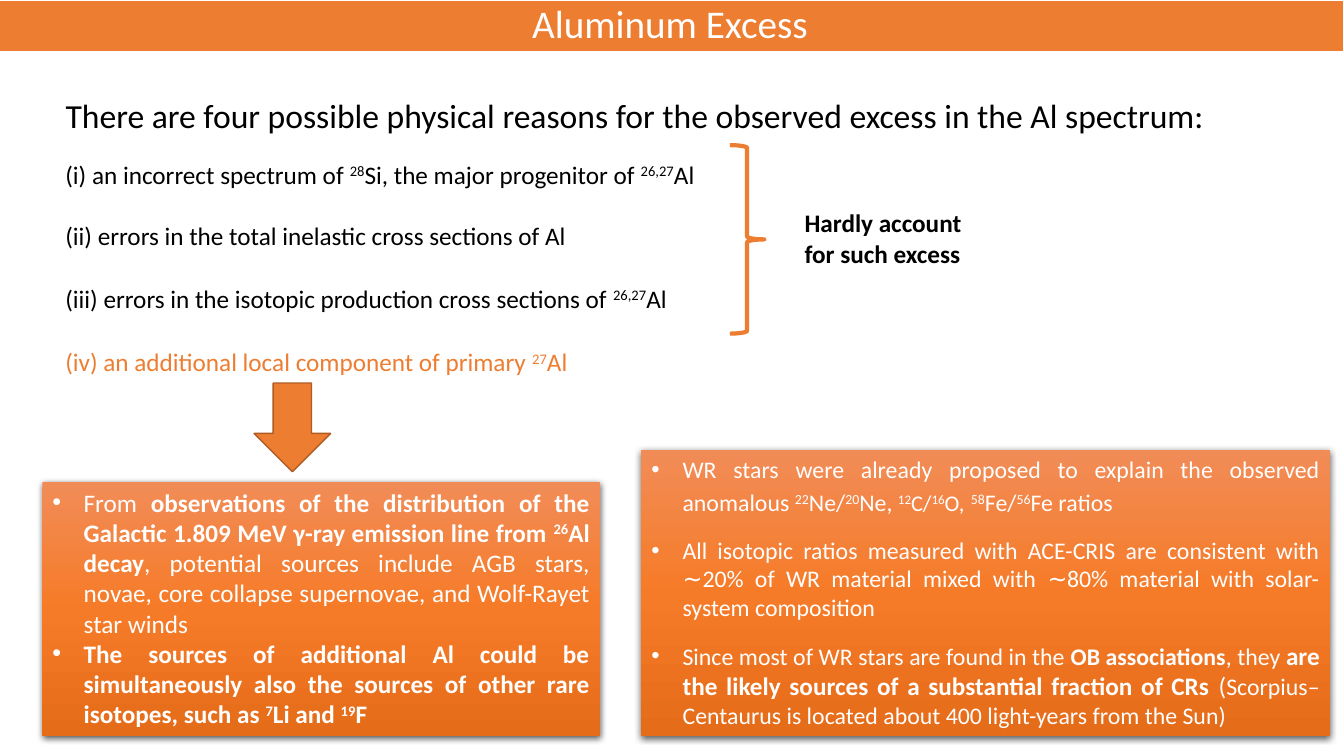
from lxml import etree
from pptx import Presentation
from pptx.dml.color import RGBColor
from pptx.enum.shapes import MSO_SHAPE as SHAPE
from pptx.enum.text import MSO_ANCHOR as ANCHOR, MSO_AUTO_SIZE as AUTO, PP_ALIGN as ALIGN
from pptx.oxml import parse_xml
from pptx.util import Inches, Pt

NS = 'xmlns:a="http://schemas.openxmlformats.org/drawingml/2006/main"'
ORANGE, WHITE, BLACK = "ED7D31", "FFFFFF", "000000"


def rgb(value):
    return RGBColor.from_string(value)


class SlideBuilder:
    font = "Calibri"
    stops = ((0, "F18C57"), (50, "F67B28"), (100, "E56C19"))

    def __init__(self, slide):
        self.s = slide

    def placeholder(self, idx, box):
        sp = self.s.placeholders[idx]
        sp.left, sp.top, sp.width, sp.height = (Inches(v) for v in box)
        return sp

    def fill_text(self, sp, paragraphs, size, color, anchor=ANCHOR.TOP, align=ALIGN.LEFT,
                  spacing=1.0, gap=0, bullet=False):
        tf = sp.text_frame
        tf.word_wrap = True
        tf.auto_size = AUTO.NONE
        tf.vertical_anchor = anchor
        for i, runs in enumerate(paragraphs):
            p = tf.add_paragraph() if i else tf.paragraphs[0]
            p.alignment = align
            p.line_spacing = spacing
            p.space_before = Pt(gap if i else 0)
            if bullet:
                self.bullet(p)
            for run in runs:
                self.add_run(p, size, color, *run)

    def add_run(self, p, size, color, text, style="", own_size=None):
        r = p.add_run()
        r.text = text
        r.font.name = self.font
        r.font.size = Pt(own_size or size)
        r.font.bold = "b" in style
        r.font.color.rgb = rgb(color)
        if "^" in style:
            r.font._element.set("baseline", "30000")

    def bullet(self, p):
        pPr = p._p.get_or_add_pPr()
        pPr.set("marL", str(Inches(0.31)))
        pPr.set("indent", str(Inches(-0.31)))
        pPr.append(parse_xml(f'<a:buFont {NS} typeface="Arial"/>'))
        pPr.append(parse_xml(f'<a:buChar {NS} char="•"/>'))

    def title(self, box, text):
        sp = self.placeholder(0, box)
        sp.fill.solid()
        sp.fill.fore_color.rgb = rgb(ORANGE)
        sp.line.color.rgb = rgb(WHITE)
        sp.line.width = Pt(1.5)
        self.fill_text(sp, [[(text,)]], 28, WHITE, ANCHOR.MIDDLE, ALIGN.CENTER, 0.9)

    def body(self, idx, box, paragraphs, size, spacing=1.0):
        self.fill_text(self.placeholder(idx, box), paragraphs, size, BLACK, spacing=spacing)

    def panel(self, idx, box, paragraphs, size, gap=0):
        sp = self.placeholder(idx, box)
        spPr = sp._element.spPr
        stops = "".join(f'<a:gs pos="{pos * 1000}"><a:srgbClr val="{color}"/></a:gs>'
                        for pos, color in self.stops)
        spPr.append(parse_xml(f'<a:gradFill {NS} rotWithShape="1"><a:gsLst>{stops}</a:gsLst>'
                              '<a:lin ang="5400000" scaled="0"/></a:gradFill>'))
        effects = etree.SubElement(spPr, spPr[-1].tag.replace("gradFill", "effectLst"))
        effects.append(parse_xml(
            f'<a:outerShdw {NS} blurRad="{Pt(4.5)}" dist="{Pt(1.5)}" dir="5400000" '
            'algn="ctr" rotWithShape="0"><a:srgbClr val="000000">'
            '<a:alpha val="63000"/></a:srgbClr></a:outerShdw>'))
        self.fill_text(sp, paragraphs, size, WHITE, align=ALIGN.JUSTIFY, gap=gap, bullet=True)

    def text(self, box, paragraphs, size, color):
        sp = self.s.shapes.add_textbox(*(Inches(v) for v in box))
        self.fill_text(sp, paragraphs, size, color)

    def shape(self, kind, box, line, width, fill=None):
        sp = self.s.shapes.add_shape(kind, *(Inches(v) for v in box))
        sp.shadow.inherit = False
        if fill:
            sp.fill.solid()
            sp.fill.fore_color.rgb = rgb(fill)
        else:
            sp.fill.background()
        sp.line.color.rgb = rgb(line)
        sp.line.width = Pt(width)


REASONS = [
    (1.53, 7.64, BLACK, [("(i) an incorrect spectrum of ",), ("28", "^"),
                         ("Si, the major progenitor of ",), ("26,27", "^"), ("Al",)]),
    (2.14, 6.67, BLACK, [("(ii) errors in the total inelastic cross sections of Al",)]),
    (2.76, 7.74, BLACK, [("(iii) errors in the isotopic production cross sections of ",),
                         ("26,27", "^"), ("Al",)]),
    (3.39, 6.67, ORANGE, [("(iv) an additional local component of primary ",),
                          ("27", "^"), ("Al",)]),
]
SOURCES = [
    [("From ",),
     ("observations of the distribution of the Galactic 1.809 MeV γ-ray emission line from ", "b"),
     ("26", "b^"), ("Al decay", "b"),
     (", potential sources include AGB stars, novae, core collapse supernovae, "
      "and Wolf-Rayet star winds",)],
    [("The sources of additional Al could be simultaneously also the sources of other "
      "rare isotopes, such as ", "b"),
     ("7", "b^"), ("Li and ", "b"), ("19", "b^"), ("F", "b")],
]
WR_STARS = [
    [("WR stars were already proposed to explain the observed anomalous ",),
     ("22", "^"), ("Ne/",), ("20", "^"), ("Ne, ",),
     ("12", "^", 16), ("C/", "", 16), ("16", "^", 16), ("O,", "", 16), (" ", "", 20),
     ("58", "^"), ("Fe/",), ("56", "^"), ("Fe ratios",)],
    [("All isotopic ratios measured with ACE-CRIS are consistent with ∼20% of WR material "
      "mixed with ∼80% material with solar-system composition",)],
    [("Since most of WR stars are found in the ",), ("OB associations", "b"), (", they ",),
     ("are the likely sources of a substantial fraction of CRs ", "b", 18), ("(", "", 18),
     ("Scorpius–Centaurus is located about 400 light-years from the Sun)",)],
]


def main():
    prs = Presentation()
    prs.slide_width, prs.slide_height = Inches(13.33), Inches(7.5)
    comparison = prs.slide_layouts[4]
    s = SlideBuilder(prs.slides.add_slide(comparison))

    s.title((-0.04, 0, 13.37, 0.52), "Aluminum Excess")
    s.body(1, (0.55, 0.94, 11.81, 0.59),
           [[("There are four possible physical reasons for the observed excess "
              "in the Al spectrum:",)]], 24, 0.9)
    s.panel(2, (0.42, 4.78, 5.53, 2.52), SOURCES, 18)
    s.panel(4, (6.36, 4.46, 6.83, 2.84), WR_STARS, 17, gap=13.4)

    for top, width, color, runs in REASONS:
        s.text((0.55, top, width, 0.4), [runs], 18, color)
    s.shape(SHAPE.RIGHT_BRACE, (7.24, 1.44, 0.34, 1.87), ORANGE, 3)
    s.body(3, (7.88, 2.01, 2.8, 0.71),
           [[("Hardly account", "b")], [("for such excess", "b")]], 18)
    s.shape(SHAPE.DOWN_ARROW, (2.52, 3.8, 0.76, 0.88), "AF5C24", 1, ORANGE)

    prs.save("out.pptx")


if __name__ == "__main__":
    main()
